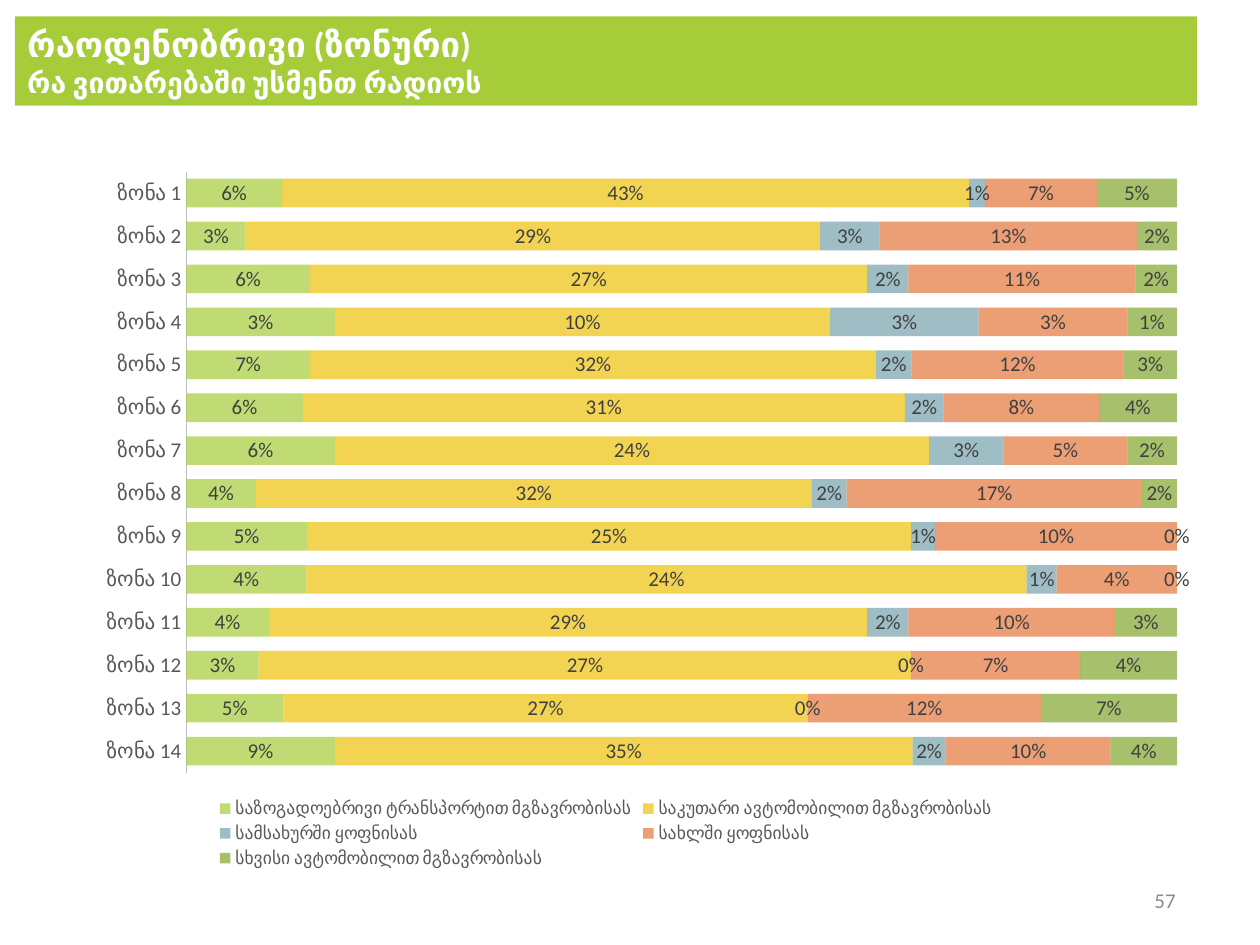
from lxml import etree
from pptx import Presentation, util as u
from pptx.chart.data import CategoryChartData
from pptx.dml.color import RGBColor
from pptx.enum import chart as charts, shapes, text
from pptx.oxml import parse_xml
from pptx.oxml.ns import nsdecls, qn

FONT = "Calibri"
COLORS = {
    "banner": "A6CD39", "white": "FFFFFF", "number": "8C8C8C",
    "label": "404040", "axis_text": "595959", "axis_line": "BFBFBF",
}
TITLE = [("რაოდენობრივი (ზონური)", 19.8), ("რა ვითარებაში უსმენთ რადიოს", 16.2)]
PAGE_NUMBER = "57"
ZONES = [f"ზონა {number}" for number in range(1, 15)]
SITUATIONS = [
    ("საზოგადოებრივი ტრანსპორტით მგზავრობისას", "A6CD39",
     [6, 3, 6, 3, 7, 6, 6, 4, 5, 4, 4, 3, 5, 9]),
    ("საკუთარი ავტომობილით მგზავრობისას", "EDC209",
     [43, 29, 27, 10, 32, 31, 24, 32, 25, 24, 29, 27, 27, 35]),
    ("სამსახურში ყოფნისას", "76A2AB",
     [1, 3, 2, 3, 2, 2, 3, 2, 1, 1, 2, 0, 0, 2]),
    ("სახლში ყოფნისას", "E5753A",
     [7, 13, 11, 3, 12, 8, 5, 17, 10, 4, 10, 7, 12, 10]),
    ("სხვისი ავტომობილით მგზავრობისას", "81A62D",
     [5, 2, 2, 1, 3, 4, 2, 2, 0, 0, 3, 4, 7, 4]),
]
OPACITY = 70
PLOT_AREA = {"x": 0.145, "y": 0.063, "w": 0.838, "h": 0.803}
LEFT, WIDTH = u.Cm(0.3), u.Cm(23.83)


def color(name):
    return RGBColor.from_string(COLORS.get(name, name))


def set_font(font, size, name, bold=None):
    font.name, font.size, font.bold = FONT, u.Pt(size), bold
    font.color.rgb = color(name)


def add_banner(page):
    banner = page.shapes.add_shape(
        shapes.MSO_SHAPE.RECTANGLE, LEFT, u.Cm(0.33), WIDTH, u.Cm(1.8))
    banner.shadow.inherit = False
    banner.fill.solid()
    banner.fill.fore_color.rgb = color("banner")
    banner.line.fill.background()
    banner.text_frame.vertical_anchor = text.MSO_ANCHOR.MIDDLE
    para = banner.text_frame.paragraphs[0]
    para.alignment = text.PP_ALIGN.LEFT
    for index, (line, size) in enumerate(TITLE):
        if index:
            para.add_line_break()
        span = para.add_run()
        span.text = line
        set_font(span.font, size, "white", True)


def add_page_number(page):
    box = page.shapes.add_textbox(u.Cm(22.91), u.Cm(17.63), u.Cm(1.04), u.Cm(1.02))
    box.text_frame.word_wrap = True
    box.text_frame.vertical_anchor = text.MSO_ANCHOR.MIDDLE
    para = box.text_frame.paragraphs[0]
    para.text = PAGE_NUMBER
    para.alignment = text.PP_ALIGN.RIGHT
    set_font(para.font, 12, "number")


def place_plot(chart):
    area = chart.element.find(".//" + qn("c:plotArea"))
    for old in area.findall(qn("c:layout")):
        area.remove(old)
    settings = [("layoutTarget", "inner"), ("xMode", "edge"), ("yMode", "edge"),
                *PLOT_AREA.items()]
    layout = parse_xml(f"<c:layout {nsdecls('c')}><c:manualLayout/></c:layout>")
    for tag, value in settings:
        etree.SubElement(layout[0], qn(f"c:{tag}"), val=str(value))
    area.insert(0, layout)


def style_series(series, fill):
    series.format.fill.solid()
    series.format.fill.fore_color.rgb = color(fill)
    shade = series.format.fill._xPr.find(".//" + qn("a:srgbClr"))
    etree.SubElement(shade, qn("a:alpha"), val=str(OPACITY * 1000))
    labels = series.data_labels
    labels.show_value = True
    labels.number_format, labels.number_format_is_linked = "0%", False
    set_font(labels.font, 12, "label")


def add_listening_chart(page):
    data = CategoryChartData(number_format="0%")
    data.categories = ZONES
    for name, _, percents in SITUATIONS:
        data.add_series(name, [percent / 100 for percent in percents])
    chart = page.shapes.add_chart(
        charts.XL_CHART_TYPE.BAR_STACKED_100, LEFT, u.Cm(2.51), WIDTH, u.Cm(15.09), data).chart
    chart.has_title = False
    set_font(chart.font, 10, "axis_text")

    chart.has_legend = True
    chart.legend.position = charts.XL_LEGEND_POSITION.BOTTOM
    chart.legend.include_in_layout = False
    set_font(chart.legend.font, 10, "axis_text")

    zones = chart.category_axis
    zones.reverse_order = True
    zones.major_tick_mark = zones.minor_tick_mark = charts.XL_TICK_MARK.NONE
    zones.format.line.color.rgb = color("axis_line")
    zones.format.line.width = u.Pt(0.75)
    set_font(zones.tick_labels.font, 12, "axis_text")

    share = chart.value_axis
    share.minimum_scale, share.maximum_scale = 0, 1
    share.has_major_gridlines = False
    share.visible = False

    plot = chart.plots[0]
    plot.gap_width, plot.overlap = 50, 100
    plot.vary_by_categories = False
    for series, (_, fill, _) in zip(plot.series, SITUATIONS):
        style_series(series, fill)
    place_plot(chart)


def main():
    deck = Presentation()
    deck.slide_width, deck.slide_height = u.Cm(25.4), u.Cm(19.05)
    page = deck.slides.add_slide(deck.slide_layouts[6])
    add_banner(page)
    add_page_number(page)
    add_listening_chart(page)
    deck.save("out.pptx")


if __name__ == "__main__":
    main()
